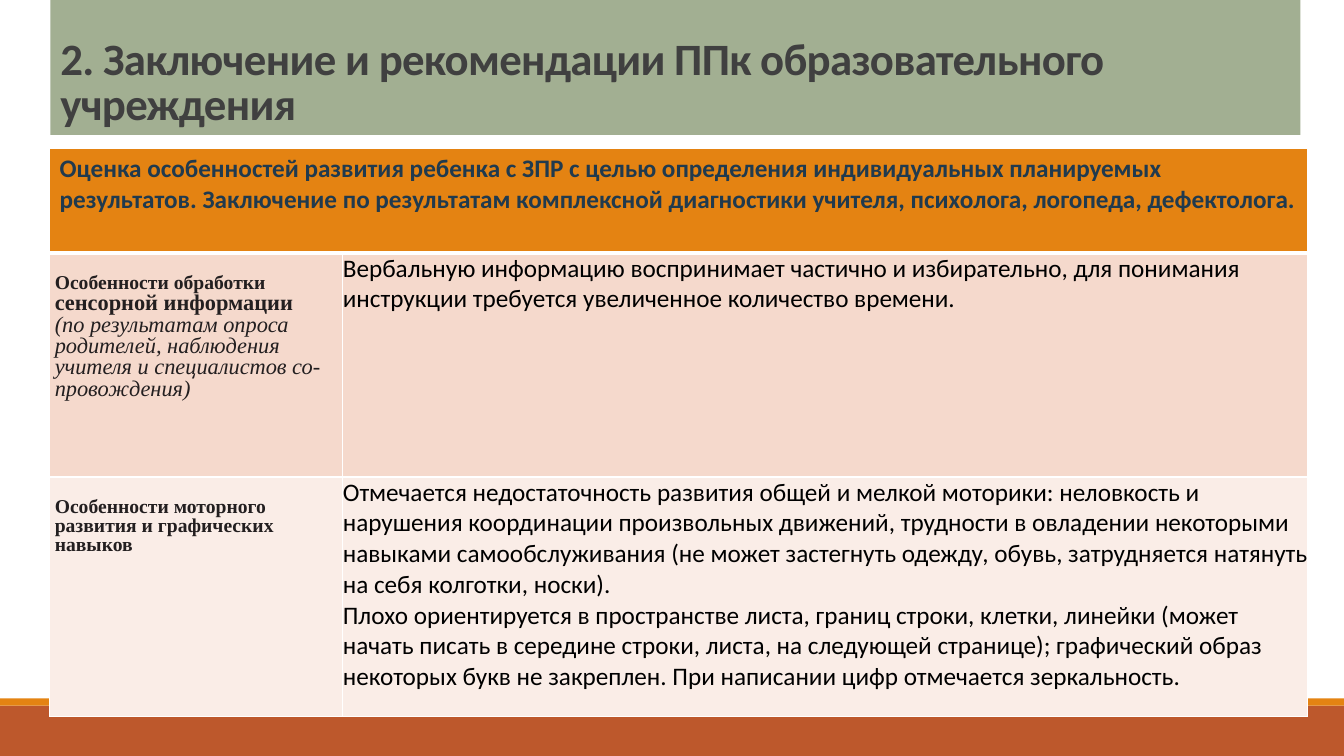
from dataclasses import dataclass

from lxml import etree
from pptx import Presentation
from pptx.dml.color import RGBColor
from pptx.enum.shapes import MSO_SHAPE
from pptx.enum.text import MSO_ANCHOR, PP_ALIGN
from pptx.oxml.ns import qn
from pptx.util import Cm, Pt

RECT = MSO_SHAPE.RECTANGLE
BOTTOM = MSO_ANCHOR.BOTTOM
LEFT = PP_ALIGN.LEFT


@dataclass(frozen=True)
class Theme:
    sans: str = "Calibri"
    serif: str = "Times New Roman"
    white: str = "FFFFFF"
    rust: str = "BD582C"
    orange: str = "E48312"
    sage: str = "A2AF92"
    title_ink: str = "404040"
    header_ink: str = "203A4E"
    label_ink: str = "231F20"
    body_ink: str = "000000"
    bands: tuple = ("F5D9CC", "FAEDE7")
    title_size: int = 32
    body_size: int = 18
    note_size: int = 16
    label_size: int = 14


T = Theme()


def add_bar(left, top, width, height, color):
    sp = s.shapes.add_shape(RECT, Cm(left), Cm(top), Cm(width), Cm(height))
    sp.shadow.inherit = False
    sp.fill.solid()
    sp.fill.fore_color.rgb = RGBColor.from_string(color)
    sp.line.fill.background()
    return sp


def add_run(p, text, size, color, font=T.sans, bold=False, italic=False):
    r = p.add_run()
    r.text = text
    r.font.name, r.font.size = font, Pt(size)
    r.font.bold, r.font.italic = bold, italic
    r.font.color.rgb = RGBColor.from_string(color)
    return r


prs = Presentation()
prs.slide_width, prs.slide_height = Cm(33.87), Cm(19.05)
s = prs.slides.add_slide(prs.slide_layouts[6])

# Footer bands and title
add_bar(0, 17.78, 33.87, 1.27, T.rust)
add_bar(0, 17.6, 33.87, 0.18, T.orange)

title = add_bar(1.27, 0, 31.5, 3.4, T.sage)
tf = title.text_frame
tf.word_wrap = True
tf.vertical_anchor = BOTTOM
p = tf.paragraphs[0]
p.alignment = LEFT
p.line_spacing = 0.85
r = add_run(p, "2. Заключение и рекомендации ППк образовательного учреждения",
            T.title_size, T.title_ink, bold=True)
r.font._element.set("spc", "-50")

# Assessment table
header = ("Оценка особенностей развития ребенка с ЗПР с целью определения индивидуальных "
          "планируемых результатов. Заключение по результатам комплексной диагностики "
          "учителя, психолога, логопеда, дефектолога.")

# Label paragraphs hold runs of (text, size, bold, italic)
rows = [
    ([[("Особенности обработки ", T.label_size, True, False),
       ("сенсорной информации", T.note_size, True, False)],
      [("(по результатам опроса родителей, наблюдения учителя и специалистов со- "
        "провождения)", T.note_size, False, True)]],
     ["Вербальную информацию воспринимает частично и избирательно, для понимания "
      "инструкции требуется увеличенное количество времени."]),
    ([[("Особенности моторного развития и графических навыков",
        T.label_size, True, False)]],
     ["Отмечается недостаточность развития общей и мелкой моторики: неловкость и "
      "нарушения координации произвольных движений, трудности в овладении некоторыми "
      "навыками самообслуживания (не может застегнуть одежду, обувь, затрудняется "
      "натянуть на себя колготки, носки).",
      "Плохо ориентируется в пространстве листа, границ строки, клетки, линейки (может "
      "начать писать в середине строки, листа, на следующей странице); графический образ "
      "некоторых букв не закреплен. При написании цифр отмечается зеркальность."]),
]

col_widths = (7.39, 24.32)
row_heights = (2.64, 5.64, 6.04)
table = s.shapes.add_table(len(row_heights), len(col_widths), Cm(1.25), Cm(3.74),
                           Cm(sum(col_widths)), Cm(sum(row_heights))).table
for column, width in zip(table.columns, col_widths):
    column.width = Cm(width)
for row, height in zip(table.rows, row_heights):
    row.height = Cm(height)

table.cell(0, 0).merge(table.cell(0, 1))
add_run(table.cell(0, 0).text_frame.paragraphs[0], header,
        T.body_size, T.header_ink, bold=True)

for i, (label, body) in enumerate(rows, start=1):
    label_cell, body_cell = table.cell(i, 0), table.cell(i, 1)
    for cell in (label_cell, body_cell):
        cell.margin_left = cell.margin_right = cell.margin_top = cell.margin_bottom = 0
    label_cell.margin_left = Cm(0.13)
    label_cell.margin_top = Cm(0.55)
    for j, runs in enumerate(label):
        tf = label_cell.text_frame
        p = tf.add_paragraph() if j else tf.paragraphs[0]
        p.line_spacing = 0.86
        for text, size, bold, italic in runs:
            add_run(p, text, size, T.label_ink, T.serif, bold, italic)
    for j, text in enumerate(body):
        tf = body_cell.text_frame
        p = tf.add_paragraph() if j else tf.paragraphs[0]
        add_run(p, text, T.body_size, T.body_ink)

# Cell fills and white borders, thicker under the header
for i, fill in enumerate((T.orange, *T.bands)):
    for j in range(len(col_widths)):
        cell = table.cell(i, j)
        cell.fill.solid()
        cell.fill.fore_color.rgb = RGBColor.from_string(fill)
        tc_pr = cell._tc.get_or_add_tcPr()
        for k, side in enumerate(("lnL", "lnR", "lnT", "lnB")):
            under_header = (i, side) in ((0, "lnB"), (1, "lnT"))
            ln = etree.Element(qn(f"a:{side}"), w=str(Pt(3 if under_header else 1)))
            solid = etree.SubElement(ln, qn("a:solidFill"))
            etree.SubElement(solid, qn("a:srgbClr"), val=T.white)
            tc_pr.insert(k, ln)

prs.save("out.pptx")
